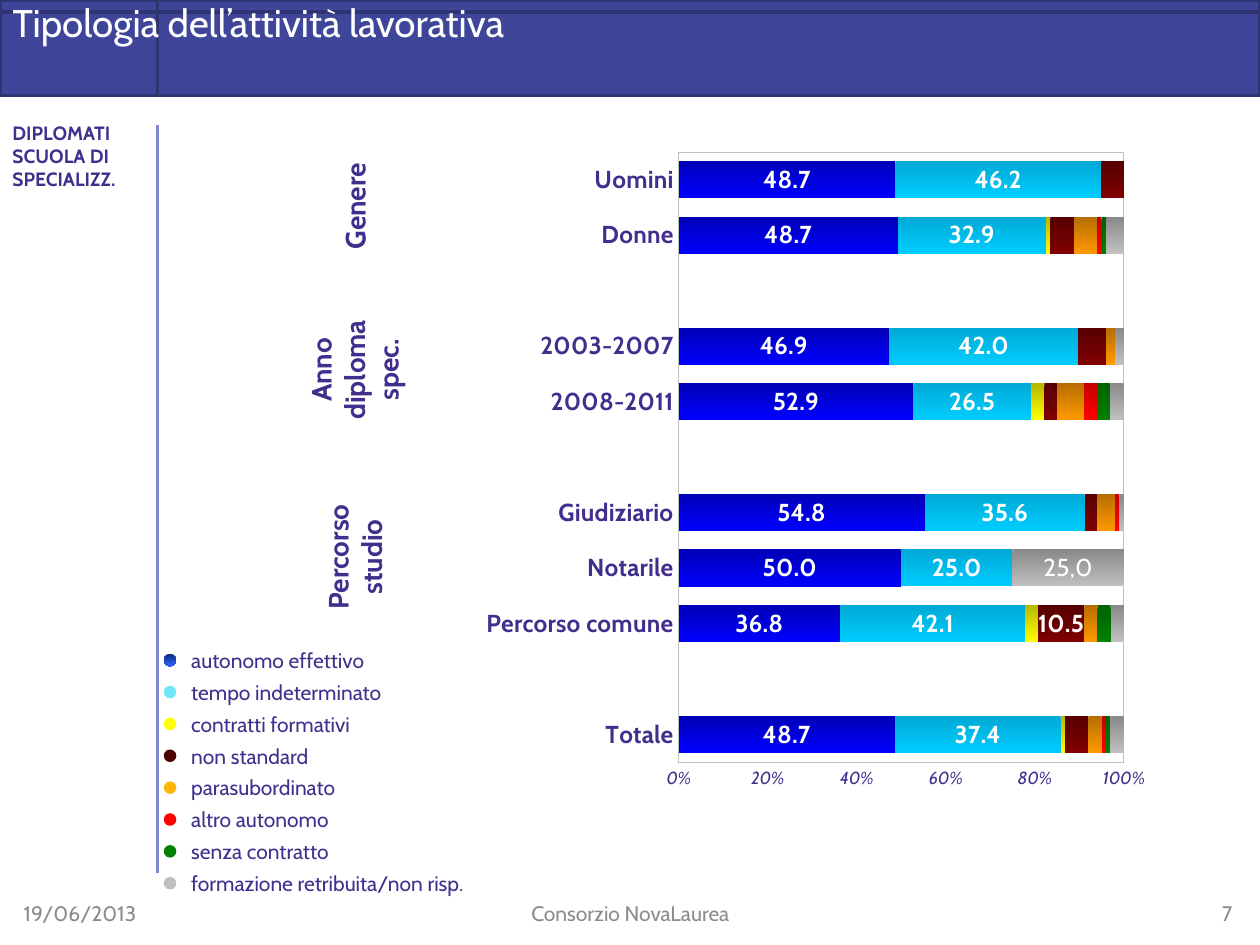
import pptx
import pptx.chart.data
import pptx.dml.color
import pptx.enum.chart
import pptx.enum.shapes
import pptx.enum.text
import pptx.oxml
import pptx.oxml.ns
import pptx.oxml.xmlchemy
import pptx.util

Pt = pptx.util.Pt
SHAPES = pptx.enum.shapes.MSO_SHAPE
ALIGN = pptx.enum.text.PP_ALIGN
ANCHOR = pptx.enum.text.MSO_ANCHOR
CHART = pptx.enum.chart

COLORS = {"band": "3F469A", "band_line": "2F3472", "rule": "8288CC", "text": "422E8D",
          "white": "FFFFFF", "footer": "8C8C8C", "frame": "C0C0C0"}

TITLE = "Tipologia dell’attività lavorativa"
POPULATION = "DIPLOMATI SCUOLA DI SPECIALIZZ."

GROUPS = [("Genere", 104.4, 26.6), ("Anno diploma spec.", 178.6, 65.5),
          ("Percorso studio", 295.2, 46.1)]

FOOTERS = [("19/06/2013", 6.5, 167.8, ALIGN.LEFT),
           ("Consorzio NovaLaurea", 246.2, 228.2, ALIGN.CENTER),
           ("7", 543.6, 167.8, ALIGN.RIGHT)]

CATEGORIES = ["Totale", "", "Percorso comune", "Notarile", "Giudiziario", "",
              "2008-2011", "2003-2007", "", "Donne", "Uomini"]

ACTIVITIES = [
    ("autonomo effettivo", ("0D2B81", "3366FF"), ("0000B6", "0000FF"),
     [48.7, None, 36.8, 50, 54.8, None, 52.9, 46.9, None, 48.7, 48.7]),
    ("tempo indeterminato", "70E7F4", ("00AAD5", "00CCFF"),
     [37.4, None, 42.1, 25, 35.6, None, 26.5, 42, None, 32.9, 46.2]),
    ("contratti formativi", "FFFF00", ("B6B600", "FFFF00"),
     [1, None, 3, 0, 0, None, 3, 0, None, 1, 0]),
    ("non standard", "4D0000", ("560000", "800000"),
     [5.2, None, 10.5, 0, 2.7, None, 2.9, 6.2, None, 5.3, 5.1]),
    ("parasubordinato", "FFB60B", ("B66D00", "FF9900"),
     [3, None, 3, 0, 4, None, 6, 2, None, 5, 0]),
    ("altro autonomo", "FF0000", ("C60000", "FF0000"),
     [1, None, 0, 0, 1, None, 3, 0, None, 1, 0]),
    ("senza contratto", "008000", ("006400", "008000"),
     [1, None, 3, 0, 0, None, 3, 0, None, 1, 0]),
    ("formazione retribuita/non risp.", "BFBFBF", ("898989", "C0C0C0"),
     [3, None, 3, 25, 1, None, 3, 2, None, 4, 0]),
]

PLOT_LAYOUT = {"layoutTarget": "inner", "xMode": "edge", "yMode": "edge",
               "x": 0.427, "y": 0.005, "w": 0.484, "h": 0.937}
LEGEND_TOP, LEGEND_STEP, DOT = 366.5, 18.2, 7.2


def rgb(color):
    return pptx.dml.color.RGBColor.from_string(color)


def assign(target, **values):
    for key, value in values.items():
        setattr(target, key, value)


def style(font, size, color, bold=False, italic=False):
    assign(font, name="Cabin", size=Pt(size), bold=bold, italic=italic)
    font.color.rgb = rgb(color)


def paint(fill, color):
    if isinstance(color, str):
        fill.solid()
        fill.fore_color.rgb = rgb(color)
        return
    fill.gradient()
    fill.gradient_angle = 270
    for stop, (position, shade) in zip(fill.gradient_stops, enumerate(color)):
        stop.position = position
        stop.color.rgb = rgb(shade)


def stroke(line, color, width):
    line.color.rgb = rgb(color)
    line.width = Pt(width)


def write(box, text, size, color, bold=False, align=ALIGN.LEFT, anchor=ANCHOR.TOP):
    frame = box.text_frame
    assign(frame, word_wrap=True, auto_size=pptx.enum.text.MSO_AUTO_SIZE.NONE,
           vertical_anchor=anchor, text=text)
    paragraph = frame.paragraphs[0]
    paragraph.alignment = align
    style(paragraph.runs[0].font, size, color, bold)
    return paragraph


def add_text(slide, place, *args, **formats):
    box = slide.shapes.add_textbox(*map(Pt, place))
    write(box, *args, **formats)
    return box


def add_shape(slide, preset, place, color):
    shape = slide.shapes.add_shape(preset, *map(Pt, place))
    shape.shadow.inherit = False
    paint(shape.fill, color)
    shape.line.fill.background()
    return shape


def add_header(slide):
    band = add_shape(slide, SHAPES.FLOWCHART_INTERNAL_STORAGE, (0, 0, 720, 54.7), COLORS["band"])
    stroke(band.line, COLORS["band_line"], 2)
    rule = slide.shapes.add_connector(pptx.enum.shapes.MSO_CONNECTOR.STRAIGHT,
                                      Pt(90), Pt(71.3), Pt(90), Pt(499))
    stroke(rule.line, COLORS["rule"], 1.5)
    rule._element.spPr.append(pptx.oxml.xmlchemy.OxmlElement("a:effectLst"))
    title = slide.shapes.title
    assign(title, left=0, top=0, width=Pt(720), height=Pt(54.7))
    write(title, TITLE, 22, COLORS["white"]).line_spacing = Pt(22)
    slide.shapes._spTree.append(title._element)


def add_activity_chart(slide):
    data = pptx.chart.data.CategoryChartData(number_format="0.0")
    data.categories = CATEGORIES
    for name, _, _, values in ACTIVITIES:
        data.add_series(name, values)
    chart = slide.shapes.add_chart(CHART.XL_CHART_TYPE.BAR_STACKED_100,
                                   Pt(163.4), Pt(85), Pt(525.6), Pt(372.2), data).chart
    assign(chart, has_legend=False, has_title=False)
    style(chart.font, 12.8, COLORS["text"])
    bars = chart.plots[0]
    assign(bars, gap_width=50, overlap=100, vary_by_categories=False)

    for axis, size, italic in ((chart.category_axis, 14, False), (chart.value_axis, 10, True)):
        assign(axis, has_major_gridlines=False, major_tick_mark=CHART.XL_TICK_MARK.NONE,
               minor_tick_mark=CHART.XL_TICK_MARK.NONE)
        style(axis.tick_labels.font, size, COLORS["text"], not italic, italic)
        stroke(axis.format.line, COLORS["frame"], 0.4)
    assign(chart.value_axis, minimum_scale=0, maximum_scale=1, major_unit=0.2)
    assign(chart.value_axis.tick_labels, number_format="0%", number_format_is_linked=False)

    series = list(bars.series)
    for item, (_, _, shades, _) in zip(series, ACTIVITIES):
        paint(item.format.fill, shades)
    for item in series[:2]:
        labels = item.data_labels
        assign(labels, show_value=True, number_format="0.0", number_format_is_linked=False,
               position=CHART.XL_LABEL_POSITION.CENTER)
        style(labels.font, 14, COLORS["white"], True)
    common = series[3].points[2].data_label
    style(common.font, 14, COLORS["white"], True)
    common.position = CHART.XL_LABEL_POSITION.CENTER
    notary = series[7].points[3].data_label
    notary.text_frame.text = "25,0"
    style(notary.text_frame.paragraphs[0].runs[0].font, 14, COLORS["white"])
    notary.position = CHART.XL_LABEL_POSITION.CENTER
    frame_plot(chart)


def frame_plot(chart):
    area = chart._chartSpace.chart.plotArea
    for old in area.findall(pptx.oxml.ns.qn("c:layout")):
        area.remove(old)
    settings = "".join(f'<c:{key} val="{value}"/>' for key, value in PLOT_LAYOUT.items())
    spaces = pptx.oxml.ns.nsdecls("c", "a")
    area.insert(0, pptx.oxml.parse_xml(
        f"<c:layout {spaces}><c:manualLayout>{settings}</c:manualLayout></c:layout>"))
    area.append(pptx.oxml.parse_xml(
        f'<c:spPr {spaces}><a:noFill/><a:ln w="{Pt(0.4)}"><a:solidFill>'
        f'<a:srgbClr val="{COLORS["frame"]}"/></a:solidFill></a:ln></c:spPr>'))


def add_legend(slide):
    for row, (name, color, _, _) in enumerate(ACTIVITIES):
        top = LEGEND_TOP + row * LEGEND_STEP
        add_shape(slide, SHAPES.FLOWCHART_CONNECTOR, (93.6, top + DOT, DOT, DOT), color)
        add_text(slide, (102.2, top, 190, 21.6), name, 12, COLORS["text"])


def main():
    deck = pptx.Presentation()
    assign(deck, slide_width=Pt(720), slide_height=Pt(540))
    slide = deck.slides.add_slide(deck.slide_layouts[5])
    add_header(slide)
    add_activity_chart(slide)
    add_legend(slide)
    for name, top, height in GROUPS:
        group = add_text(slide, (162, top, 81.4, height), name, 16, COLORS["text"],
                         bold=True, align=ALIGN.CENTER)
        group.rotation = 270
    add_text(slide, (0, 65.5, 93.6, 46), POPULATION, 11, COLORS["text"], bold=True)
    for text, left, width, align in FOOTERS:
        add_text(slide, (left, 507.6, width, 28.8), text, 12, COLORS["footer"],
                 align=align, anchor=ANCHOR.MIDDLE)
    deck.save("out.pptx")


if __name__ == "__main__":
    main()
